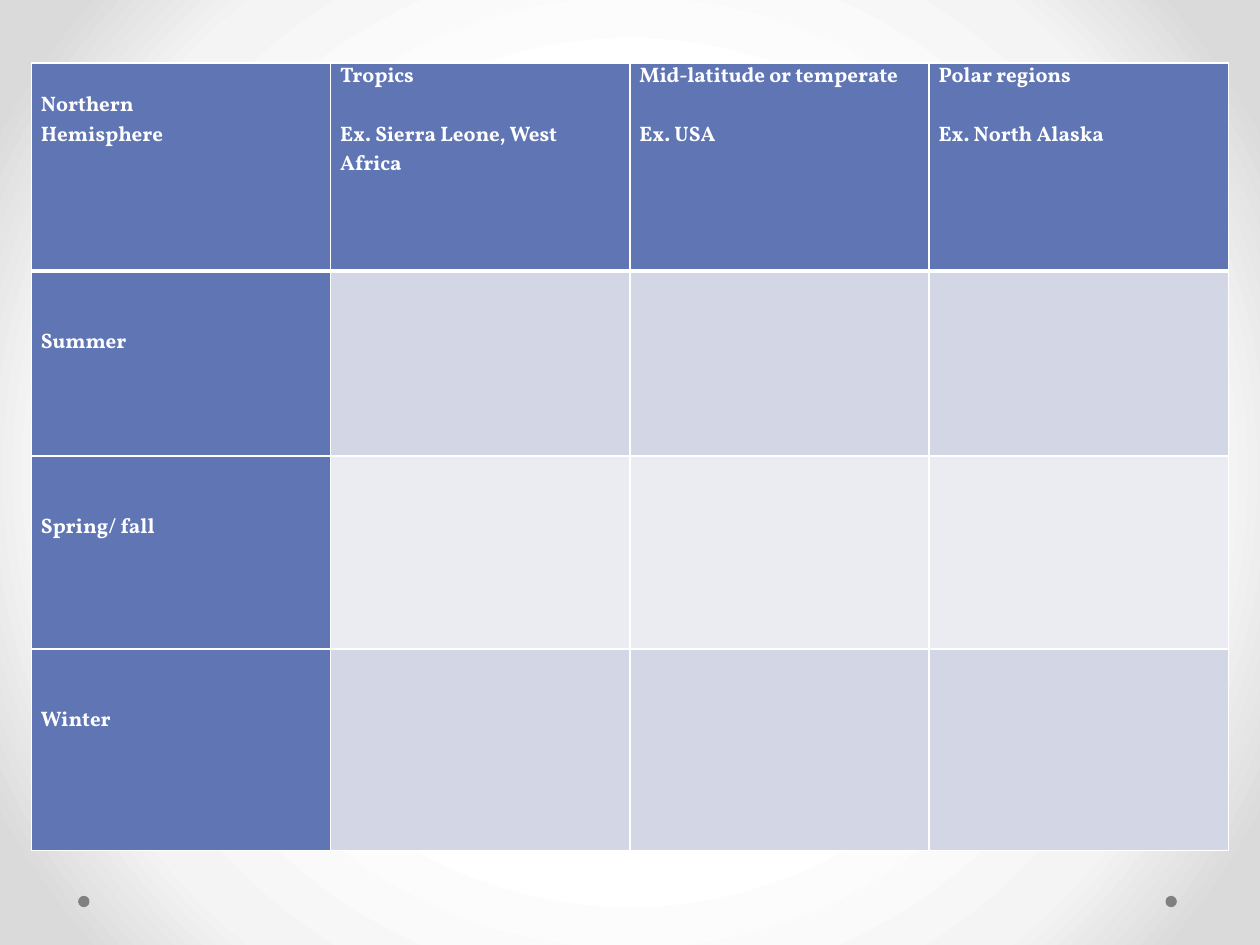
from dataclasses import dataclass

import pptx
import pptx.dml.color
import pptx.enum.shapes
import pptx.oxml
import pptx.oxml.ns
import pptx.presentation
import pptx.slide
import pptx.table
import pptx.util

RGB = pptx.dml.color.RGBColor
WHITE = RGB(0xFF, 0xFF, 0xFF)
BLUE = RGB(0x60, 0x76, 0xB4)
BAND_DARK = RGB(0xD2, 0xD6, 0xE5)
BAND_LIGHT = RGB(0xEA, 0xEC, 0xF2)
GREY = RGB(0x80, 0x80, 0x80)
BACKGROUND_STOPS = (
    (50, WHITE),
    (76, RGB(0xF4, 0xF4, 0xF4)),
    (92, RGB(0xDA, 0xDA, 0xDA)),
)

FONT = "Vollkorn"
PX_PER_INCH = 200
LINE = 46  # height of one line of text, px
COL_WIDTH = 475
ROW_HEIGHTS = (330, 294, 306, 320)


@dataclass(frozen=True)
class Label:
    """Cell text, with the lines left free above it and between its paragraphs."""
    text: str
    lines_above: int = 0
    lines_between: int = 0


@dataclass(frozen=True)
class Dot:
    left: int
    top: int = 1422
    size: int = 18


HEADERS = (
    Label("Northern\nHemisphere", lines_above=1),
    Label("Tropics\nEx. Sierra Leone, West Africa", lines_between=1),
    Label("Mid-latitude or temperate\nEx. USA", lines_between=1),
    Label("Polar regions\nEx. North Alaska", lines_between=1),
)
SEASONS = tuple(Label(name, lines_above=2) for name in ("Summer", "Spring/ fall", "Winter"))
DOTS = (Dot(1850), Dot(124))


def px(n: int) -> pptx.util.Emu:
    return pptx.util.Emu(n * 914400 // PX_PER_INCH)


def set_background(s: pptx.slide.Slide) -> None:
    """Radial gradient spreading from the centre of the slide."""
    s.background.fill.gradient()
    grad = s.element.find(".//" + pptx.oxml.ns.qn("a:gradFill"))
    for child in list(grad):
        grad.remove(child)
    stops = "".join(
        f'<a:gs pos="{pos * 1000}"><a:srgbClr val="{color}"/></a:gs>'
        for pos, color in BACKGROUND_STOPS
    )
    ns = pptx.oxml.ns.nsdecls("a")
    grad.append(pptx.oxml.parse_xml(f"<a:gsLst {ns}>{stops}</a:gsLst>"))
    grad.append(pptx.oxml.parse_xml(
        f'<a:path {ns} path="circle">'
        '<a:fillToRect l="50000" t="50000" r="50000" b="50000"/></a:path>'
    ))


def draw_dot(s: pptx.slide.Slide, dot: Dot) -> None:
    sp = s.shapes.add_shape(
        pptx.enum.shapes.MSO_SHAPE.OVAL,
        px(dot.left), px(dot.top), px(dot.size), px(dot.size),
    )
    sp.shadow.inherit = False
    sp.fill.solid()
    sp.fill.fore_color.rgb = GREY
    sp.line.fill.background()


def style_cell(cell: pptx.table._Cell, fill: RGB, top: int = 1, bottom: int = 1) -> None:
    """Fill the cell and give it white borders; top and bottom widths are in points."""
    tc_pr = cell._tc.get_or_add_tcPr()
    for side, width in (("L", 1), ("R", 1), ("T", top), ("B", bottom)):
        tc_pr.append(pptx.oxml.parse_xml(
            f'<a:ln{side} {pptx.oxml.ns.nsdecls("a")} w="{pptx.util.Pt(width)}">'
            f'<a:solidFill><a:srgbClr val="{WHITE}"/></a:solidFill></a:ln{side}>'
        ))
    cell.fill.solid()
    cell.fill.fore_color.rgb = fill


def write_label(cell: pptx.table._Cell, label: Label) -> None:
    cell.margin_left = cell.margin_right = px(15)
    cell.margin_top = px(label.lines_above * LINE)
    cell.margin_bottom = 0
    tf = cell.text_frame
    tf.text = label.text
    for i, p in enumerate(tf.paragraphs):
        if i and label.lines_between:
            p.space_before = px(label.lines_between * LINE)
        for r in p.runs:
            r.font.name = FONT
            r.font.size = pptx.util.Pt(12)
            r.font.bold = True
            r.font.color.rgb = WHITE


def draw_table(s: pptx.slide.Slide) -> None:
    n_rows, n_cols = len(ROW_HEIGHTS), len(HEADERS)
    table = s.shapes.add_table(
        n_rows, n_cols, px(50), px(100), px(COL_WIDTH * n_cols), px(sum(ROW_HEIGHTS))
    ).table
    for col in table.columns:
        col.width = px(COL_WIDTH)
    for row, height in zip(table.rows, ROW_HEIGHTS):
        row.height = px(height)

    for cell, label in zip(table.rows[0].cells, HEADERS):
        style_cell(cell, BLUE, bottom=3)
        write_label(cell, label)
    for i, season in enumerate(SEASONS, start=1):
        band = BAND_DARK if i % 2 else BAND_LIGHT
        for j, cell in enumerate(table.rows[i].cells):
            style_cell(cell, band if j else BLUE, top=3 if i == 1 else 1)
        write_label(table.cell(i, 0), season)


def main() -> None:
    prs = pptx.Presentation()
    prs.slide_width, prs.slide_height = px(2000), px(1500)
    s = prs.slides.add_slide(prs.slide_layouts[6])
    set_background(s)
    for dot in DOTS:
        draw_dot(s, dot)
    draw_table(s)
    prs.save("out.pptx")


if __name__ == "__main__":
    main()
